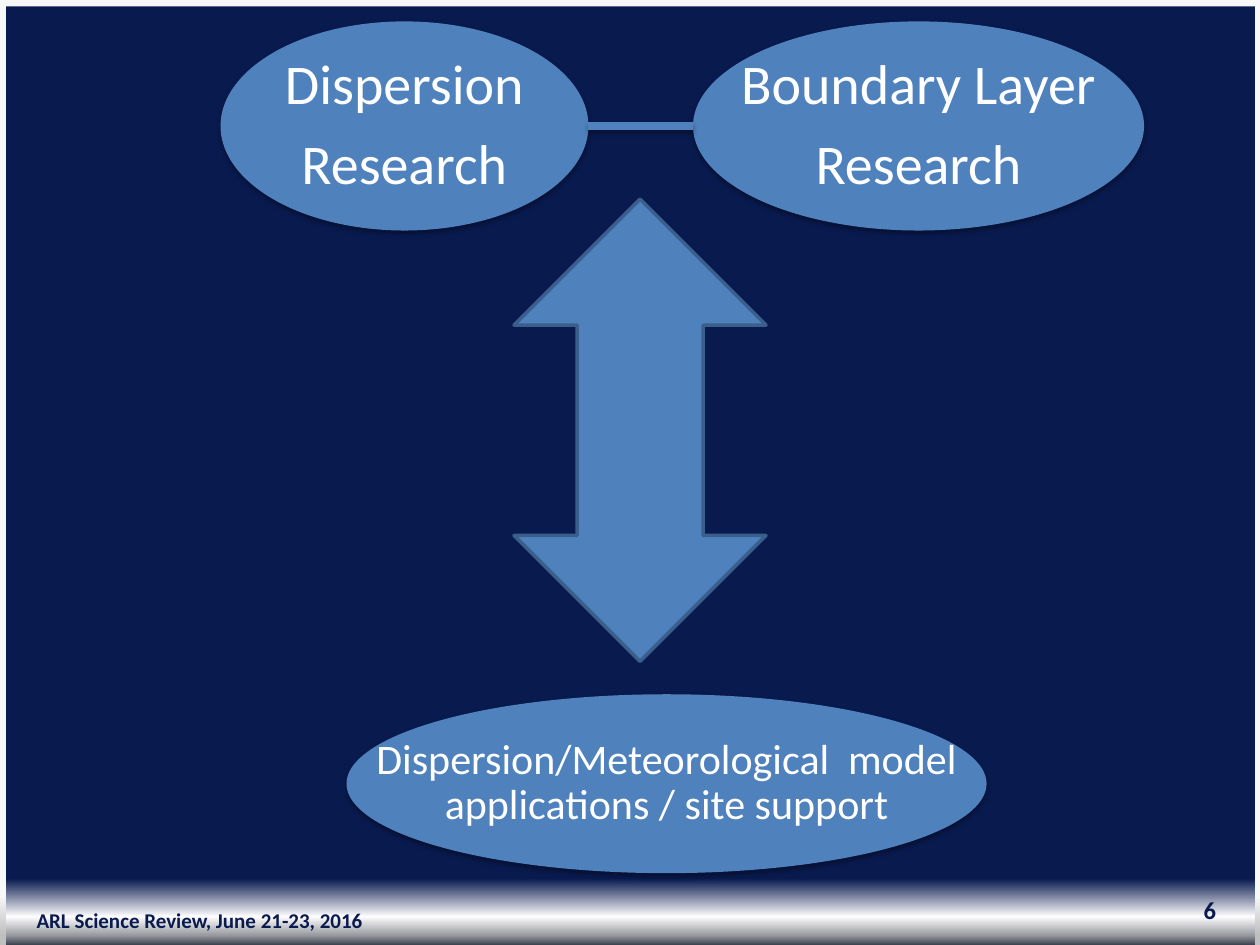
from dataclasses import dataclass

from lxml.etree import SubElement
from pptx import Presentation
from pptx.dml.color import RGBColor
from pptx.dml.fill import FillFormat
from pptx.enum.shapes import MSO_CONNECTOR, MSO_SHAPE
from pptx.enum.text import MSO_ANCHOR, PP_ALIGN
from pptx.oxml.ns import qn
from pptx.oxml.xmlchemy import BaseOxmlElement
from pptx.shapes.autoshape import Shape
from pptx.slide import Slide
from pptx.util import Inches, Pt

NAVY = "091A4F"
BLUE = "4F81BD"
EDGE_BLUE = "3A5F8C"
WHITE = "FFFFFF"
PALE = "F8F8F8"
BACKGROUND_STOPS = [(93, NAVY), (97, "FEFEFE"), (99, "9799A0"), (100, "3C414E")]
SIDE_STOPS = [(0, PALE), (95, "F5F5F5"), (99, "BFBFBF")]


@dataclass
class Box:
    left: float
    top: float
    width: float
    height: float

    def lengths(self) -> list[Inches]:
        return [Inches(value) for value in (self.left, self.top, self.width, self.height)]


@dataclass
class Topic:
    box: Box
    text: str
    size: int


TOPICS = [
    Topic(Box(1.75, 0.17, 2.92, 1.66), "Dispersion\nResearch", 32),
    Topic(
        Box(2.75, 5.51, 5.08, 1.42),
        "Dispersion/Meteorological  model\vapplications / site support",
        24,
    ),
    Topic(Box(5.5, 0.17, 3.58, 1.66), "Boundary Layer\nResearch", 32),
]


def color(value: str) -> RGBColor:
    return RGBColor.from_string(value)


def fill_gradient(
    fill: FillFormat, container: BaseOxmlElement, stops: list[tuple[int, str]]
) -> None:
    fill.gradient()
    fill.gradient_angle = 270
    stop_list = next(container.iter(qn("a:gsLst")))
    for stop in list(stop_list):
        stop_list.remove(stop)
    for position, value in stops:
        stop = SubElement(stop_list, qn("a:gs"), pos=str(position * 1000))
        SubElement(stop, qn("a:srgbClr"), val=value)


def add_shadow(properties: BaseOxmlElement) -> None:
    effects = SubElement(properties, qn("a:effectLst"))
    shadow = SubElement(
        effects,
        qn("a:outerShdw"),
        blurRad=str(Pt(3.1)),
        dist=str(Pt(1.7)),
        dir="5400000",
        rotWithShape="0",
    )
    black = SubElement(shadow, qn("a:srgbClr"), val="000000")
    SubElement(black, qn("a:alpha"), val="36000")


def write_text(
    shape: Shape,
    text: str,
    *,
    size: int,
    text_color: str,
    bold: bool = False,
    align: PP_ALIGN = PP_ALIGN.CENTER,
    line_spacing: float = 1.0,
    space_after: float = 0,
    wrap: bool = True,
) -> None:
    frame = shape.text_frame
    frame.text = text
    frame.word_wrap = wrap
    frame.vertical_anchor = MSO_ANCHOR.MIDDLE
    for paragraph in frame.paragraphs:
        paragraph.alignment = align
        paragraph.line_spacing = line_spacing
        paragraph.space_after = Pt(space_after)
        for run in paragraph.runs:
            run.font.name = "Calibri"
            run.font.size = Pt(size)
            run.font.bold = bold
            run.font.color.rgb = color(text_color)


def add_filled_shape(slide: Slide, kind: MSO_SHAPE, box: Box, value: str) -> Shape:
    shape = slide.shapes.add_shape(kind, *box.lengths())
    shape.fill.solid()
    shape.fill.fore_color.rgb = color(value)
    shape.line.fill.background()
    shape.shadow.inherit = False
    return shape


def add_frame(slide: Slide) -> None:
    fill_gradient(slide.background.fill, slide.element, BACKGROUND_STOPS)
    for left in (0, 9.96):
        side = add_filled_shape(slide, MSO_SHAPE.RECTANGLE, Box(left, 0, 0.05, 7.5), PALE)
        fill_gradient(side.fill, side.element, SIDE_STOPS)
    add_filled_shape(slide, MSO_SHAPE.RECTANGLE, Box(0.02, 0, 9.98, 0.05), PALE)


def add_label(slide: Slide, box: Box, text: str, size: int, align: PP_ALIGN) -> None:
    label = slide.shapes.add_textbox(*box.lengths())
    write_text(label, text, size=size, text_color=NAVY, bold=True, align=align)


def add_topic(slide: Slide, topic: Topic) -> None:
    oval = add_filled_shape(slide, MSO_SHAPE.OVAL, topic.box, BLUE)
    oval.shadow.inherit = True
    add_shadow(oval.element.spPr)
    write_text(
        oval,
        topic.text,
        size=topic.size,
        text_color=WHITE,
        line_spacing=0.9,
        space_after=topic.size * 0.35,
        wrap=False,
    )


def add_link(slide: Slide) -> None:
    link = slide.shapes.add_connector(
        MSO_CONNECTOR.STRAIGHT, Inches(4.67), Inches(1), Inches(5.5), Inches(1)
    )
    link.line.color.rgb = color(BLUE)
    link.line.width = Pt(5)
    add_shadow(link.element.spPr)


def add_double_arrow(slide: Slide) -> None:
    arrow = add_filled_shape(slide, MSO_SHAPE.UP_DOWN_ARROW, Box(4.08, 1.58, 2, 3.67), BLUE)
    arrow.line.color.rgb = color(EDGE_BLUE)
    arrow.line.width = Pt(2)


def main() -> None:
    presentation = Presentation()
    presentation.slide_width = Inches(10)
    presentation.slide_height = Inches(7.5)
    slide = presentation.slides.add_slide(presentation.slide_layouts[6])
    add_frame(slide)
    add_label(
        slide, Box(0, 7.1, 3.17, 0.4), "ARL Science Review, June 21-23, 2016", 12, PP_ALIGN.CENTER
    )
    add_label(slide, Box(7.42, 7.02, 2.33, 0.4), "6", 14, PP_ALIGN.RIGHT)
    for topic in TOPICS:
        add_topic(slide, topic)
    add_link(slide)
    add_double_arrow(slide)
    presentation.save("out.pptx")


if __name__ == "__main__":
    main()
